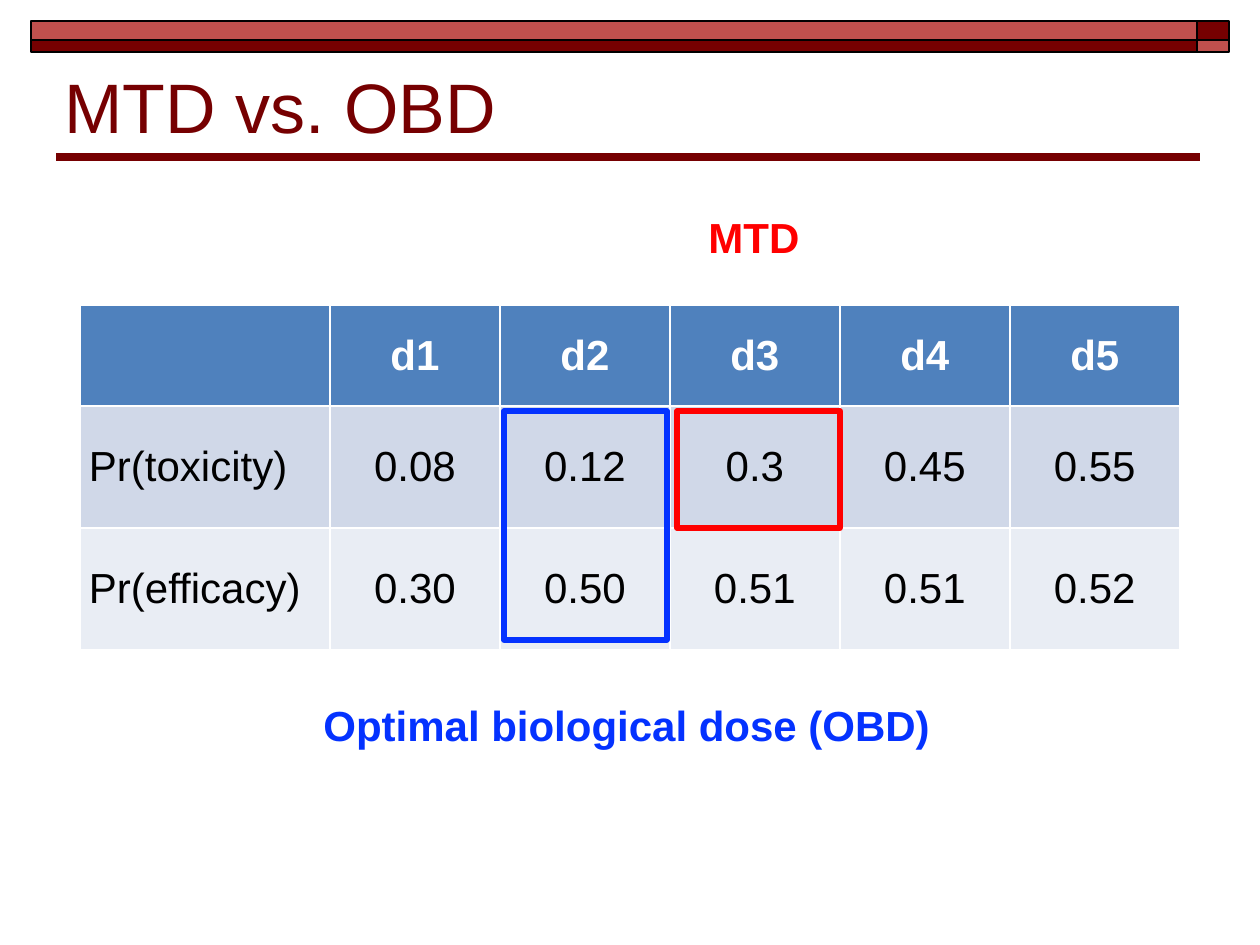
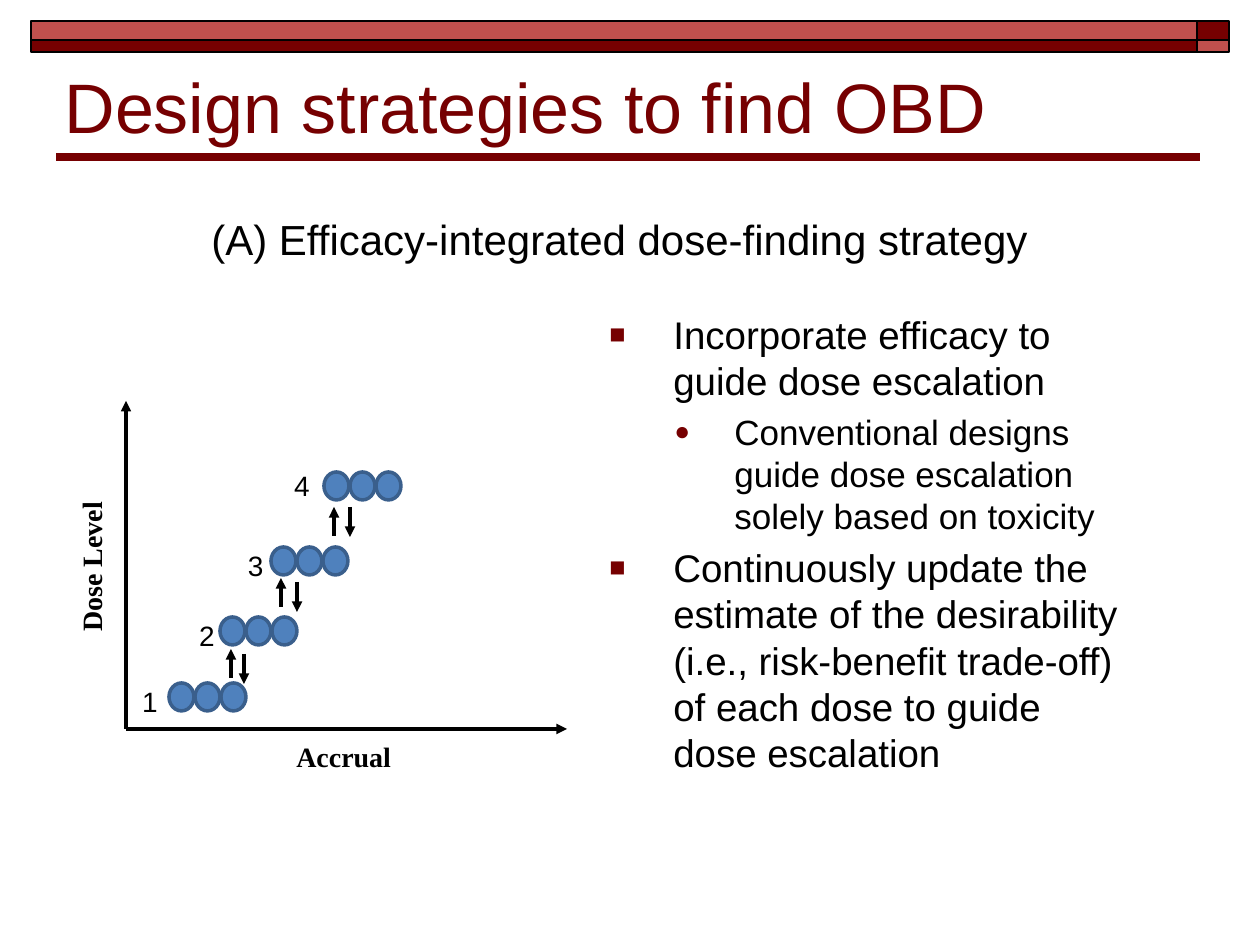
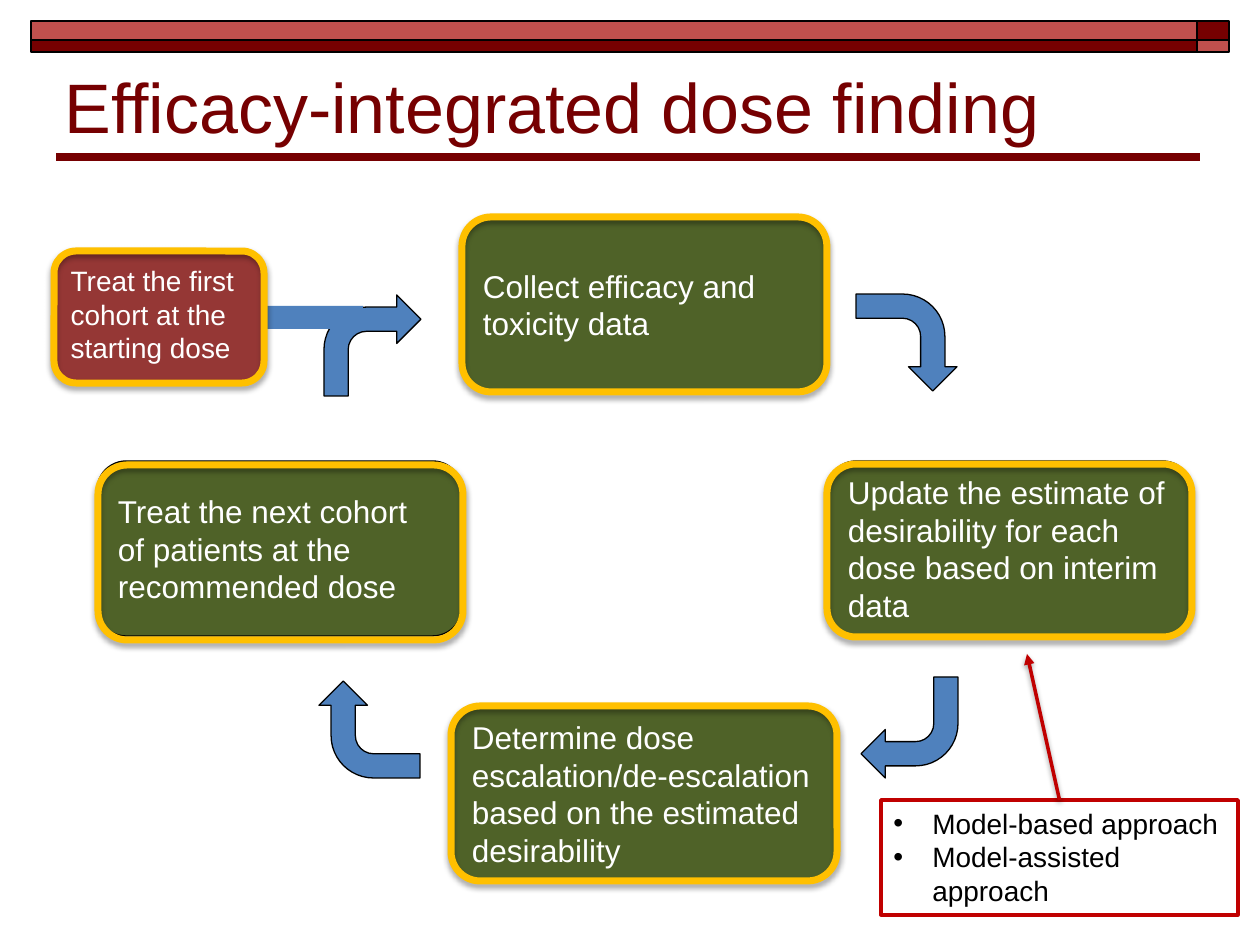
from lxml import etree
from pptx import Presentation
from pptx import util as u
from pptx.dml.color import RGBColor
from pptx.enum import shapes, text
from pptx.oxml.ns import qn

PX = 914400 / 126
COLORS = {
    "maroon": "760001", "rose": "C0504D", "black": "000000", "white": "FFFFFF",
    "blue": "4F81BD", "blue_edge": "3A5F8C", "toxicity": "D0D8E8", "efficacy": "E9EDF4",
    "mtd": "FF0000", "obd": "0432FF", "green": "4F6228", "brick": "953735",
    "gold": "FFC000", "note": "C00000",
}
RGB = {name: RGBColor.from_string(value) for name, value in COLORS.items()}
KIND = shapes.MSO_SHAPE
ALIGN = text.PP_ALIGN
ANCHOR = text.MSO_ANCHOR


def write(frame, words, size=24, color="black", bold=False, font="Arial", align=ALIGN.LEFT,
          anchor=ANCHOR.TOP, wrap=True, bullet=None, bullet_size=100, bullet_color="black",
          indent=0, hang=0, before=0):
    frame.word_wrap = wrap
    frame.vertical_anchor = anchor
    paragraph = frame.add_paragraph() if frame.text else frame.paragraphs[0]
    paragraph.alignment = align
    if before:
        paragraph.space_before = u.Pt(before)
    if bullet:
        props = paragraph._p.get_or_add_pPr()
        props.set("marL", str(round(indent * PX)))
        props.set("indent", str(round(-hang * PX)))
        tint = etree.SubElement(props, qn("a:buClr"))
        etree.SubElement(tint, qn("a:srgbClr"), val=COLORS[bullet_color])
        etree.SubElement(props, qn("a:buSzPct"), val=str(bullet_size * 1000))
        etree.SubElement(props, qn("a:buFont"), typeface="Arial")
        etree.SubElement(props, qn("a:buChar"), char=bullet)
    run = paragraph.add_run()
    run.text = words
    run.font.size = u.Pt(size)
    run.font.name = font
    run.font.bold = bold
    run.font.color.rgb = RGB[color]


def place(slide, kind, box, fill=None, line=None, width=1.0, turn=0):
    spot = [round(v * PX) for v in box]
    if kind is None:
        item = slide.shapes.add_textbox(*spot)
    else:
        item = slide.shapes.add_shape(kind, *spot)
        item.shadow.inherit = False
        if fill:
            item.fill.solid()
            item.fill.fore_color.rgb = RGB[fill]
        else:
            item.fill.background()
        if line:
            item.line.color.rgb = RGB[line]
            item.line.width = u.Pt(width)
        else:
            item.line.fill.background()
    item.rotation = turn
    return item


deck = Presentation()
deck.slide_width = u.Inches(10)
deck.slide_height = u.Inches(7.5)
strokes = []
slides = []

for heading, heading_width in [("MTD vs. OBD", 1144), ("Design strategies to find OBD", 1144),
                               ("Efficacy-integrated dose finding", 1208)]:
    slide = deck.slides.add_slide(deck.slide_layouts[5])
    slides.append(slide)
    for top, height, long_fill, short_fill in [(21, 19, "maroon", "rose"), (40, 12, "rose", "maroon")]:
        place(slide, KIND.RECTANGLE, (1197, top, 32, height), long_fill, "black")
        place(slide, KIND.RECTANGLE, (31, top, 1166, height), short_fill, "black")
    title = slide.shapes.title
    title.left, title.top, title.width, title.height = [
        round(v * PX) for v in (52, 53, heading_width, 105)]
    write(title.text_frame, heading, size=40, color="maroon", anchor=ANCHOR.MIDDLE)
    strokes.append((slide, (1200, 157), (56, 157), "maroon", 4.5, False))

comparison, strategy, cycle = slides

doses = [
    ["", "d1", "d2", "d3", "d4", "d5"],
    ["Pr(toxicity)", "0.08", "0.12", "0.3", "0.45", "0.55"],
    ["Pr(efficacy)", "0.30", "0.50", "0.51", "0.51", "0.52"],
]
table = comparison.shapes.add_table(
    3, 6, *[round(v * PX) for v in (80, 305, 1100, 345)]).table
for column, width in zip(table.columns, [250] + [170] * 5):
    column.width = round(width * PX)
for row, height in zip(table.rows, [101, 122, 122]):
    row.height = round(height * PX)
for r, row_fill in enumerate(["blue", "toxicity", "efficacy"]):
    for c, value in enumerate(doses[r]):
        cell = table.cell(r, c)
        cell.fill.solid()
        cell.fill.fore_color.rgb = RGB[row_fill]
        cell.margin_left = cell.margin_right = round(9 * PX)
        cell.margin_top = cell.margin_bottom = round(5 * PX)
        cell.vertical_anchor = ANCHOR.MIDDLE
        if value:
            write(cell.text_frame, value, color="black" if r else "white", bold=r == 0,
                  align=ALIGN.CENTER if c else ALIGN.LEFT, anchor=ANCHOR.MIDDLE)

for words, label_box, mark_box, color in [
    ("MTD", (696, 205, 207, 117), (677, 411, 163, 117), "mtd"),
    ("Optimal biological dose (OBD)", (311, 693, 638, 63), (504, 411, 163, 229), "obd"),
]:
    place(comparison, KIND.RECTANGLE, mark_box, line=color, width=3)
    label = place(comparison, None, label_box)
    write(label.text_frame, words, color=color, bold=True, wrap=False)

strokes += [(strategy, (126, 729), (567, 729), "black", 2, True),
            (strategy, (126, 729), (126, 401), "black", 1.75, True)]
for level, label_left, label_top, left, top in [
    ("1", 142, 678, 169, 683), ("2", 199, 612, 220, 617),
    ("3", 248, 542, 271, 547), ("4", 294, 462, 324, 472),
]:
    for patient in range(3):
        place(strategy, KIND.OVAL, (left + 26 * patient, top, 25, 28), "blue", "blue_edge", 2)
    label = place(strategy, None, (label_left, label_top, 20, 47))
    label.text_frame.margin_left = label.text_frame.margin_right = 0
    write(label.text_frame, level, size=16, wrap=False)
for up_x, up_top, down_x, down_top in [(231, 649, 244, 654), (281, 578, 297, 582), (334, 507, 350, 507)]:
    strokes += [(strategy, (up_x, up_top + 29), (up_x, up_top), "black", 2, True),
                (strategy, (down_x, down_top), (down_x, down_top + 30), "black", 2, True)]
for words, box, turn in [("Accrual", (284, 733, 202, 47), 0), ("Dose Level", (-6, 523, 195, 47), 270)]:
    axis_name = place(strategy, None, box, turn=turn)
    write(axis_name.text_frame, words, size=16, bold=True, font="Times New Roman")

points = place(strategy, None, (597, 305, 538, 577)).text_frame
major = dict(size=22, bullet="■", bullet_size=70, indent=64, hang=64)
minor = dict(size=20, bullet="●", bullet_size=75, indent=125, hang=60)
for words, style, before in [
    ("Incorporate efficacy to guide dose escalation", major, 0),
    ("Conventional designs guide dose escalation solely based on toxicity", minor, 4),
    ("Continuously update the estimate of the desirability (i.e., risk-benefit trade-off) "
     "of each dose to guide dose escalation", major, 4.4),
]:
    write(points, words, bullet_color="maroon", before=before, **style)
subtitle = place(strategy, None, (199, 207, 851, 63))
write(subtitle.text_frame, "(A) Efficacy-integrated dose-finding strategy", wrap=False)

for words, box in [
    ("Update the estimate of desirability for each dose based on interim data", (827, 461, 365, 175)),
    ("Treat the next cohort of patients at the recommended dose", (97, 461, 365, 175)),
    ("Determine dose escalation/de-escalation based on the estimated desirability", (451, 706, 386, 175)),
    ("Collect efficacy and toxicity data", (462, 217, 365, 175)),
]:
    stage = place(cycle, KIND.ROUNDED_RECTANGLE, box, "green", "black", 0.75)
    write(stage.text_frame, words, size=18, color="white", anchor=ANCHOR.MIDDLE)
for left, top, turn in [(858, 292, 90), (861, 677, 180), (324, 295, 0), (321, 679, 270)]:
    place(cycle, KIND.BENT_ARROW, (left, top, 97, 101), "blue", "black", 0.75, turn)
start = place(cycle, KIND.ROUNDED_RECTANGLE, (52, 251, 213, 132), "brick", "black", 0.75)
write(start.text_frame, "Treat the first cohort at the starting dose", size=16, color="white")
place(cycle, KIND.RECTANGLE, (266, 306, 97, 23), "blue")

shaded = []
for box in [(54, 251, 210, 132), (462, 217, 365, 175), (827, 464, 365, 173),
            (451, 706, 386, 175), (98, 465, 365, 175)]:
    shaded.append((place(cycle, KIND.ROUNDED_RECTANGLE, box, line="gold", width=4), 23000, 35000))

approaches = place(cycle, KIND.RECTANGLE, (881, 800, 357, 115), line="note", width=2)
for words in ["Model-based approach", "Model-assisted approach"]:
    write(approaches.text_frame, words, size=16, bullet="•", indent=39, hang=39)
strokes.append((cycle, (1059, 800), (1027, 654), "note", 2, True))

for slide, begin, end, color, width, arrow in strokes:
    stroke = slide.shapes.add_connector(
        shapes.MSO_CONNECTOR.STRAIGHT, *[round(v * PX) for v in begin + end])
    stroke.line.color.rgb = RGB[color]
    stroke.line.width = u.Pt(width)
    if arrow:
        etree.SubElement(stroke.line._get_or_add_ln(), qn("a:tailEnd"), type="triangle")
    etree.SubElement(stroke._element.spPr, qn("a:effectLst"))
    if color == "note":
        stroke.begin_connect(approaches, 0)
        shaded.append((stroke, 20000, 38000))

for item, distance, opacity in shaded:
    effects = item._element.spPr.find(qn("a:effectLst"))
    shade = etree.SubElement(effects, qn("a:outerShdw"), blurRad="40000", dist=str(distance),
                             dir="5400000", rotWithShape="0")
    tint = etree.SubElement(shade, qn("a:srgbClr"), val=COLORS["black"])
    etree.SubElement(tint, qn("a:alpha"), val=str(opacity))

deck.save("out.pptx")
